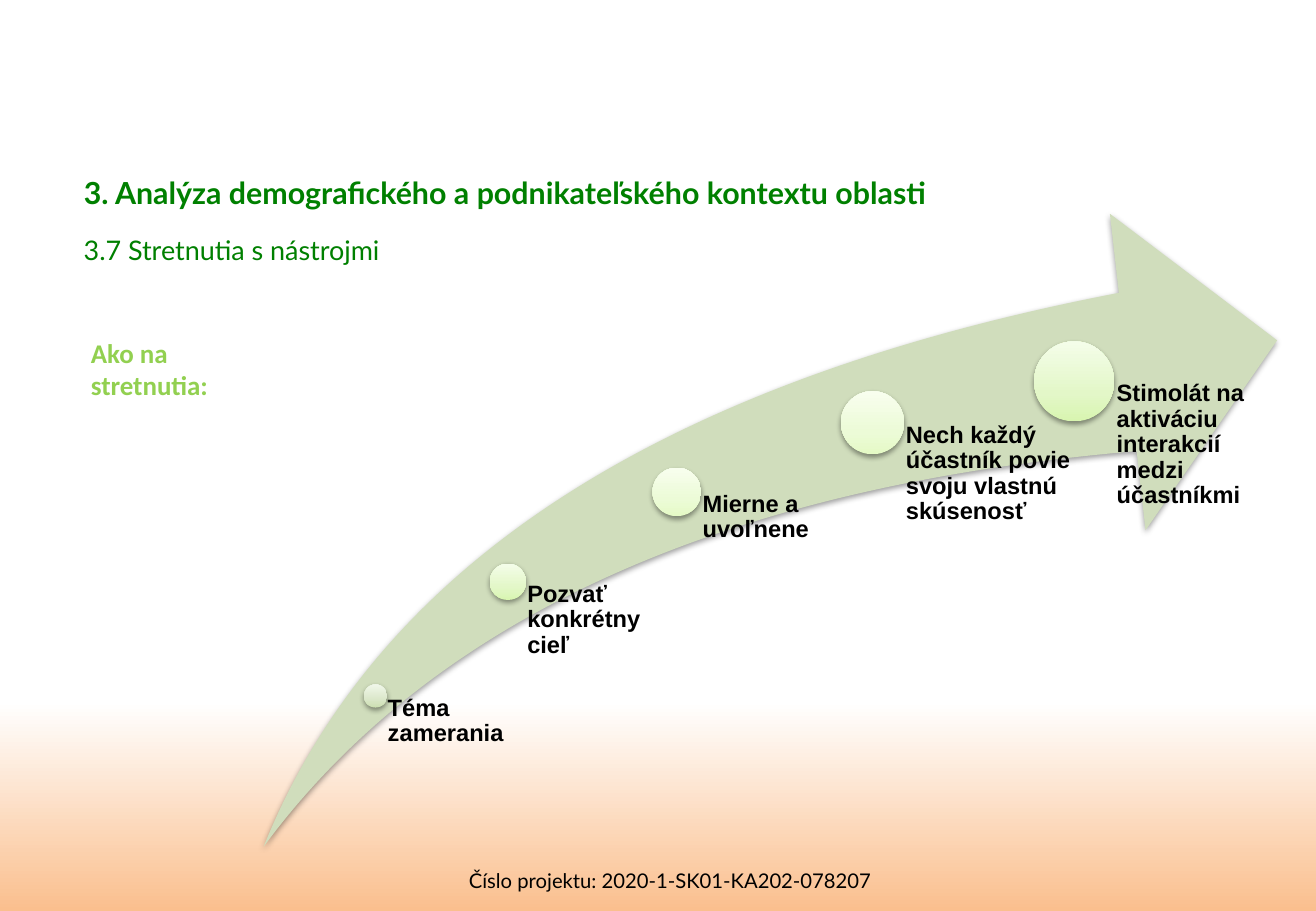
from lxml.etree import SubElement
from pptx import Presentation
from pptx.dml.color import RGBColor
from pptx.enum.shapes import MSO_SHAPE
from pptx.enum.text import MSO_ANCHOR, MSO_AUTO_SIZE, PP_ALIGN
from pptx.oxml.ns import qn
from pptx.util import Inches, Pt

GREEN, LIME, BLACK = "008000", "92D050", "000000"
ARROW_FILL = "D0DDBC"
SAGE = [(0, "CCDFB1"), (35, "DAE7C9"), (100, "F1F7EA")]
SPRING = [(0, "D8F5B0"), (35, "E3F7C8"), (100, "F4FDE9")]
PALE = [(0, "E5FAC6"), (35, "ECFBD7"), (100, "F8FEEE")]
ARROW_BOX = (2.17, 1.76, 8.34, 5.21)
ARROW_BOTTOM = ARROW_BOX[1] + ARROW_BOX[3]


def rgb(color):
    return RGBColor.from_string(color)


def add_gradient(fill, element, stops, angle):
    """Fill with any number of (percent, colour) stops, clockwise angle."""
    fill.gradient()
    grad = next(element.iter(qn("a:gradFill")))
    for child in list(grad):
        grad.remove(child)
    stop_list = SubElement(grad, qn("a:gsLst"))
    for pos, color in stops:
        stop = SubElement(stop_list, qn("a:gs"), pos=str(pos * 1000))
        SubElement(stop, qn("a:srgbClr"), val=color)
    SubElement(grad, qn("a:lin"), ang=str(angle * 60000), scaled="0")


class Deck:
    def __init__(self, width, height):
        self.prs = Presentation()
        self.prs.slide_width, self.prs.slide_height = Inches(width), Inches(height)
        self.s = self.prs.slides.add_slide(self.prs.slide_layouts[5])

    def background(self, stops, angle):
        add_gradient(self.s.background.fill, self.s.element, stops, angle)

    def set_text(self, sp, text, size, color, font, bold=False, align=PP_ALIGN.LEFT,
                 insets=(0.1, 0.05, 0.1, 0.05), spacing=1.0, wrap=True):
        tf = sp.text_frame
        tf.word_wrap = wrap
        tf.auto_size = MSO_AUTO_SIZE.NONE
        tf.vertical_anchor = MSO_ANCHOR.TOP
        (tf.margin_left, tf.margin_top,
         tf.margin_right, tf.margin_bottom) = map(Inches, insets)
        p = tf.paragraphs[0]
        p.alignment, p.line_spacing = align, spacing
        r = p.add_run()
        r.text = text
        r.font.size, r.font.name, r.font.bold = Pt(size), font, bold
        r.font.color.rgb = rgb(color)

    def title(self, box, text, **style):
        sp = self.s.shapes.title
        sp.left, sp.top, sp.width, sp.height = map(Inches, box)
        self.set_text(sp, text, **style)

    def text(self, box, text, **style):
        self.set_text(self.s.shapes.add_textbox(*map(Inches, box)), text, **style)

    def shape(self, kind, box, fill):
        """Borderless shape with a soft shadow; fill is a colour or stops."""
        sp = self.s.shapes.add_shape(kind, *map(Inches, box))
        if isinstance(fill, str):
            sp.fill.solid()
            sp.fill.fore_color.rgb = rgb(fill)
        else:
            add_gradient(sp.fill, sp.element.spPr, fill, 270)
        sp.line.fill.background()
        sp.shadow.inherit = False
        effects = sp.element.spPr.find(qn("a:effectLst"))
        shadow = SubElement(effects, qn("a:outerShdw"), blurRad=str(Pt(3.1)),
                            dist=str(Pt(1.6)), dir="5400000", rotWithShape="0")
        color = SubElement(shadow, qn("a:srgbClr"), val=BLACK)
        SubElement(color, qn("a:alpha"), val="38000")
        return sp

    def step(self, x, y, size, width, fill, text):
        """Circle centred on x, y with its label starting at the centre."""
        self.shape(MSO_SHAPE.OVAL, (x - size / 2, y - size / 2, size, size), fill)
        self.text((x, y, width, ARROW_BOTTOM - y), text, size=14, color=BLACK,
                  font="Arial", bold=True, insets=(size * 0.53, 0, 0, 0), spacing=0.9)


def main():
    deck = Deck(10.83, 7.5)
    deck.background([(0, "FFFFFF"), (77, "FFFFFF"), (100, "FABF8E")], 90)

    # Headings and footer
    deck.text((3.74, 7.1, 3.55, 0.3), "Číslo projektu: 2020-1-SK01-KA202-078207",
              size=12, color=BLACK, font="Lato", align=PP_ALIGN.CENTER, wrap=False)
    deck.title((0.59, 1.38, 9.65, 0.39),
               "3. Analýza demografického a podnikateľského kontextu oblasti",
               size=18, color=GREEN, font="Lato", bold=True)
    deck.text((0.59, 1.87, 9.65, 0.39), "3.7 Stretnutia s nástrojmi",
              size=16, color=GREEN, font="Lato")
    deck.text((0.65, 2.72, 1.24, 1.45), "Ako na stretnutia:",
              size=16, color=LIME, font="Calibri", bold=True)

    # Rising arrow
    arrow = deck.shape(MSO_SHAPE.SWOOSH_ARROW, ARROW_BOX, ARROW_FILL)
    arrow.adjustments[0] = arrow.adjustments[1] = 0.25

    # Steps along the arrow: centre, diameter, label width, fill, label
    steps = [
        (3.09, 5.73, 0.19, 1.09, SAGE, "Téma zamerania"),
        (4.18, 4.79, 0.3, 1.38, SPRING, "Pozvať konkrétny cieľ"),
        (5.57, 4.05, 0.4, 1.61, PALE, "Mierne a uvoľnene"),
        (7.18, 3.48, 0.52, 1.67, PALE,
         "Nech každý účastník povie svoju vlastnú skúsenosť"),
        (8.84, 3.14, 0.66, 1.67, SPRING,
         "Stimolát na aktiváciu interakcií medzi účastníkmi"),
    ]
    for step in steps:
        deck.step(*step)

    deck.prs.save("out.pptx")


if __name__ == "__main__":
    main()
